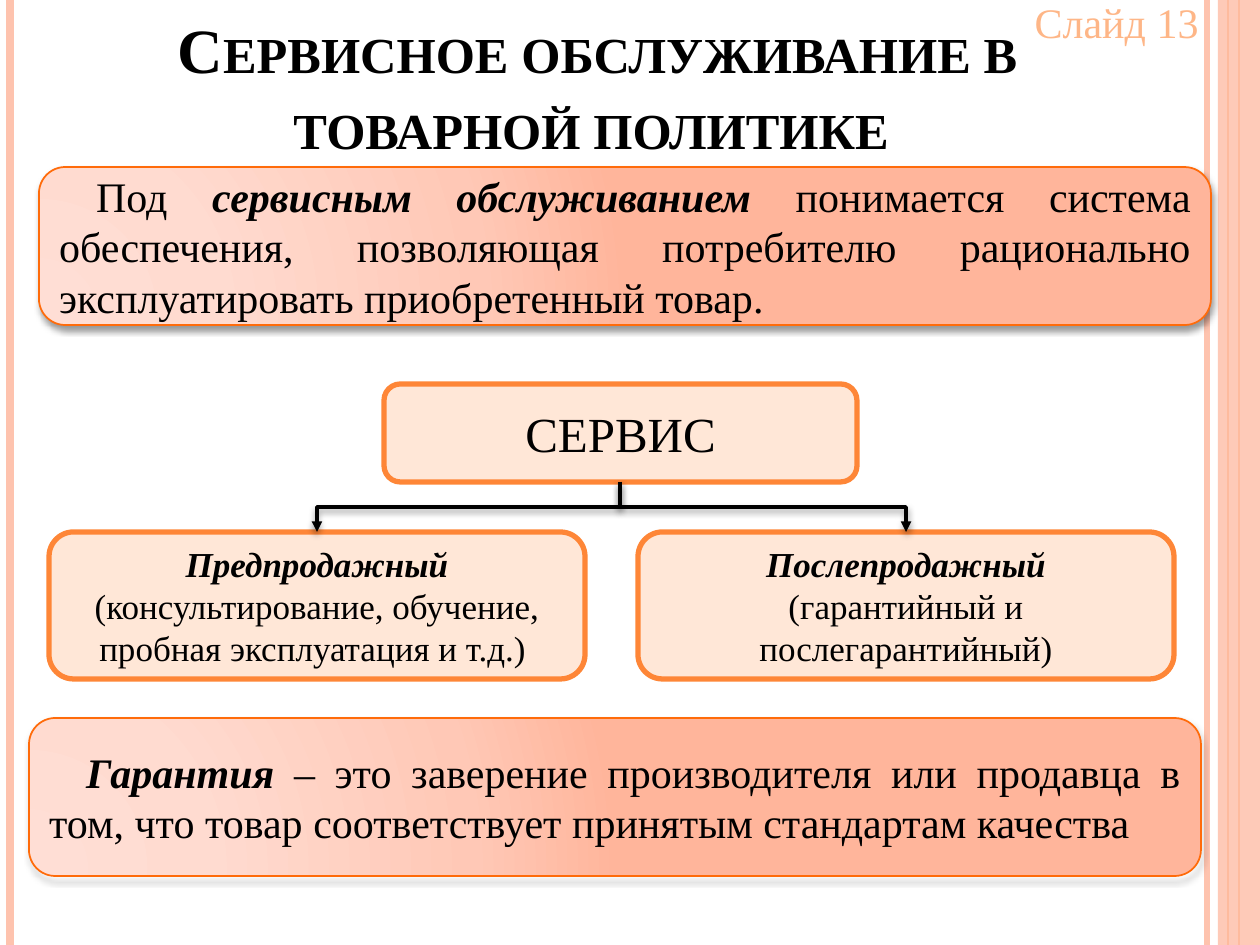
from lxml.etree import SubElement
from pptx import Presentation
from pptx.dml.color import RGBColor
from pptx.enum.shapes import MSO_CONNECTOR, MSO_SHAPE
from pptx.enum.text import MSO_ANCHOR, MSO_AUTO_SIZE, PP_ALIGN
from pptx.oxml import parse_xml
from pptx.oxml.ns import qn
from pptx.util import Pt

PX = 914400 / 126
NS = 'xmlns:a="http://schemas.openxmlformats.org/drawingml/2006/main"'
COLORS = {
    "text": "000000", "number": "FEB687", "stripe": "FEC3AE", "orange": "FE8637",
    "card": "FFE7D7", "panel_line": "FF6B0A",
}
GRADIENT = [(0, "FFDED5"), (30, "FFDBD0"), (75, "FFC8B6"), (100, "FFB59B")]
SHADOW = (
    f'<a:effectLst {NS}><a:outerShdw blurRad="50800" dist="25400" dir="5400000" rotWithShape="0">'
    '<a:srgbClr val="000000"><a:alpha val="40000"/></a:srgbClr></a:outerShdw></a:effectLst>'
)


def px(*lengths):
    return [round(length * PX) for length in lengths]


def write(frame, paragraphs, size, color="text", align=PP_ALIGN.CENTER,
          anchor=MSO_ANCHOR.MIDDLE, indent=0, small_caps=False):
    frame.word_wrap = True
    frame.auto_size = MSO_AUTO_SIZE.NONE
    frame.vertical_anchor = anchor
    for number, pieces in enumerate(paragraphs):
        paragraph = frame.add_paragraph() if number else frame.paragraphs[0]
        paragraph.alignment = align
        if indent:
            paragraph._p.get_or_add_pPr().set("indent", str(px(indent)[0]))
        for words, style in pieces:
            run = paragraph.add_run()
            run.text = words
            run.font.name = "Times New Roman"
            run.font.size = Pt(size)
            run.font.bold = "b" in style
            run.font.italic = "i" in style
            run.font.color.rgb = RGBColor.from_string(COLORS[color])
            if small_caps:
                run._r.get_or_add_rPr().set("cap", "small")


prs = Presentation()
prs.slide_width, prs.slide_height = px(1260, 945)
slide = prs.slides.add_slide(prs.slide_layouts[5])
shapes = slide.shapes

for x, color, width in [(1207, "stripe", 3), (10, "stripe", 4.5),
                        (1239, "orange", 1.5), (1228, "orange", 0.75)]:
    stripe = shapes.add_connector(MSO_CONNECTOR.STRAIGHT, *px(x, 0, x, 945))
    stripe.line.color.rgb = RGBColor.from_string(COLORS[color])
    stripe.line.width = Pt(width)
    SubElement(stripe._element.spPr, qn("a:effectLst"))

side_band = shapes.add_shape(MSO_SHAPE.RECTANGLE, *px(1218, 0, 42, 945))
side_band.shadow.inherit = False
side_band.fill.solid()
side_band.fill.fore_color.rgb = RGBColor.from_string(COLORS["stripe"])
side_band.line.fill.background()
band_color = side_band._element.spPr.find(qn("a:solidFill"))[0]
SubElement(band_color, qn("a:alpha")).set("val", "87000")

title = shapes.title
title.left, title.top, title.width, title.height = px(83, 10, 1029, 158)
write(title.text_frame, [[("Сервисное обслуживание в товарной политике ", "b")]],
      size=36, anchor=MSO_ANCHOR.BOTTOM, small_caps=True)

slide_number = shapes.add_textbox(*px(974, -10, 237, 64))
write(slide_number.text_frame, [[("Слайд 13", "")]], size=24, color="number",
      align=PP_ALIGN.RIGHT, anchor=MSO_ANCHOR.TOP)

panels = [
    (39, 167, [("Под ", ""), ("сервисным обслуживанием", "bi"),
               (" понимается система обеспечения, позволяющая потребителю "
                "рационально эксплуатировать приобретенный товар. ", "")]),
    (29, 718, [("Гарантия", "bi"),
               (" – это заверение производителя или продавца в том, что товар "
                "соответствует принятым стандартам качества", "")]),
]
stops = "".join(f'<a:gs pos="{pos * 1000}"><a:srgbClr val="{color}"/></a:gs>'
                for pos, color in GRADIENT)
for left, top, pieces in panels:
    panel = shapes.add_shape(MSO_SHAPE.ROUNDED_RECTANGLE, *px(left, top, 1172, 158))
    panel.line.color.rgb = RGBColor.from_string(COLORS["panel_line"])
    panel.line.width = Pt(1)
    panel._element.spPr.find(qn("a:prstGeom")).addnext(parse_xml(
        f'<a:gradFill {NS} rotWithShape="1"><a:gsLst>{stops}</a:gsLst><a:path path="circle">'
        '<a:fillToRect l="5000" t="100000" r="120000" b="10000"/></a:path></a:gradFill>'))
    panel._element.spPr.append(parse_xml(SHADOW))
    write(panel.text_frame, [pieces], size=24, align=PP_ALIGN.JUSTIFY, indent=37)

cards = [
    (384, 384, 473, 98, 28, [[("СЕРВИС", "")]]),
    (49, 532, 536, 147, 20, [
        [("Предпродажный", "bi")],
        [("(консультирование, обучение, пробная эксплуатация и т.д.) ", "")]]),
    (638, 532, 536, 147, 20, [
        [("Послепродажный", "bi")],
        [("(гарантийный и послегарантийный)", "")]]),
]
for left, top, width, height, size, paragraphs in cards:
    card = shapes.add_shape(MSO_SHAPE.ROUNDED_RECTANGLE, *px(left, top, width, height))
    card.shadow.inherit = False
    card.fill.solid()
    card.fill.fore_color.rgb = RGBColor.from_string(COLORS["card"])
    card.line.color.rgb = RGBColor.from_string(COLORS["orange"])
    card.line.width = Pt(3)
    write(card.text_frame, paragraphs, size=size)

service_x, service_bottom, kinds_top = 620, 482, 532
for kind_x in (317, 906):
    goes_left = kind_x < service_x
    middle_x, middle_y = (service_x + kind_x) / 2, (service_bottom + kinds_top) / 2
    half_drop, half_reach = (kinds_top - service_bottom) / 2, abs(kind_x - service_x) / 2
    side = -half_drop if goes_left else half_drop
    branch = shapes.add_connector(
        MSO_CONNECTOR.ELBOW, *px(middle_x + side, middle_y - half_reach,
                                 middle_x - side, middle_y + half_reach))
    branch._element.spPr.find(qn("a:xfrm")).set("rot", "5400000" if goes_left else "16200000")
    branch.line.color.rgb = RGBColor.from_string(COLORS["text"])
    branch.line.width = Pt(2)
    SubElement(branch.line._get_or_add_ln(), qn("a:tailEnd")).set("type", "triangle")
    branch._element.spPr.append(parse_xml(SHADOW))

prs.save("out.pptx")
